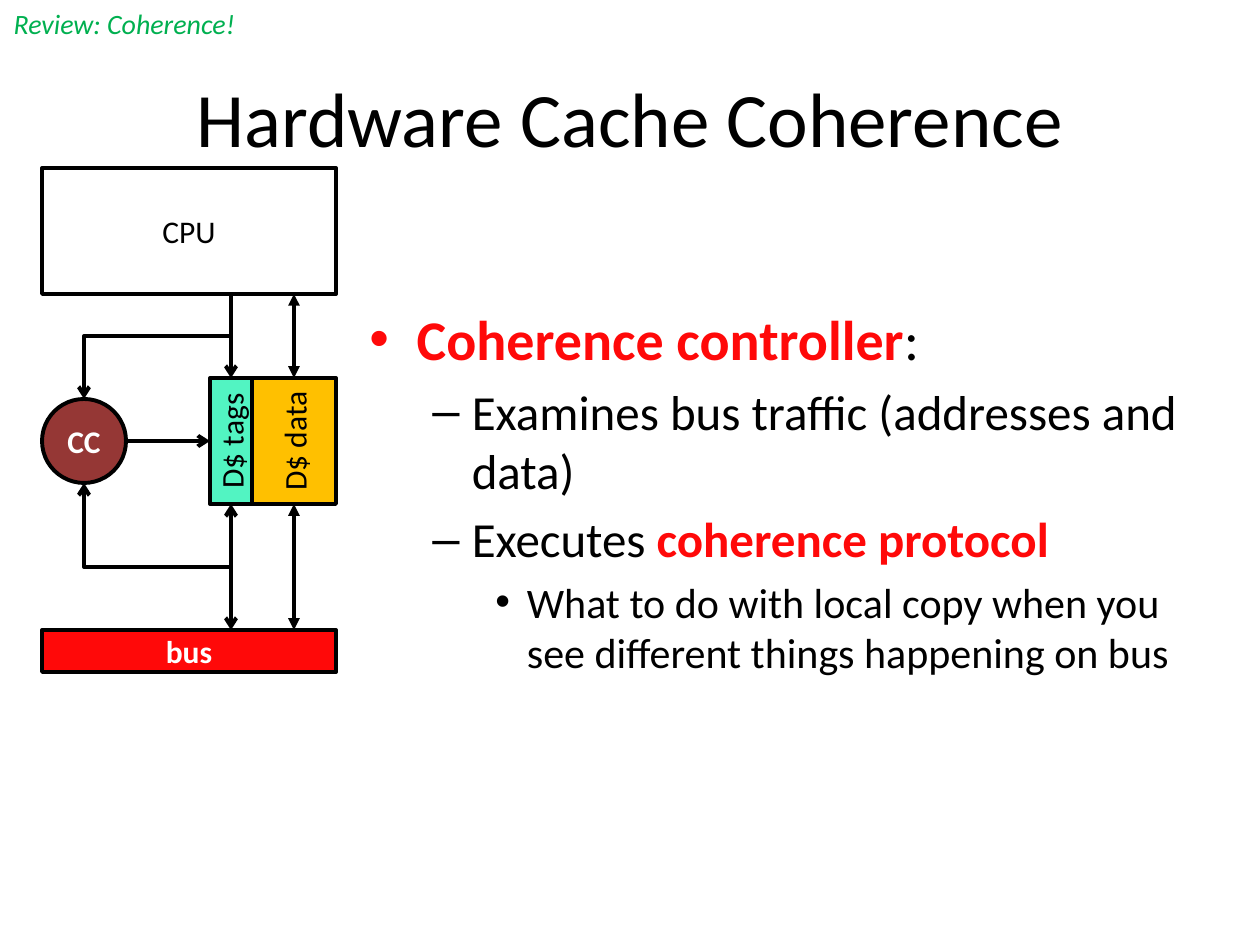
from lxml import etree
from pptx import Presentation
from pptx.dml.color import RGBColor
from pptx.enum.shapes import MSO_CONNECTOR, MSO_SHAPE
from pptx.enum.text import MSO_ANCHOR, MSO_AUTO_SIZE, PP_ALIGN
from pptx.oxml.ns import qn
from pptx.util import Pt

RECT, DISC = MSO_SHAPE.RECTANGLE, MSO_SHAPE.FLOWCHART_CONNECTOR
STRAIGHT = MSO_CONNECTOR.STRAIGHT
LEFT, MID = PP_ALIGN.LEFT, PP_ALIGN.CENTER
MIDDLE = MSO_ANCHOR.MIDDLE
FIT = MSO_AUTO_SIZE.SHAPE_TO_FIT_TEXT

BLACK = RGBColor(0, 0, 0)
WHITE = RGBColor(255, 255, 255)
RED = RGBColor(0xFF, 0x09, 0x09)
GREEN = RGBColor(0, 0xB0, 0x50)
MAROON = RGBColor(0x95, 0x37, 0x35)
GOLD = RGBColor(0xFF, 0xC0, 0)
MINT = RGBColor(0x52, 0xF4, 0xC2)

# Bullet levels: sign, left margin, hanging indent, text size
LEVELS = [("•", 27, 27, 32), ("–", 58.5, 22.5, 28), ("•", 90, 18, 24)]


def write(para, text, size=18, color=BLACK, bold=False, italic=False, align=None):
    """Add one formatted run to a paragraph."""
    run = para.add_run()
    run.text = text
    font = run.font
    font.name, font.size = "Calibri", Pt(size)
    font.bold, font.italic = bold, italic
    font.color.rgb = color
    if align is not None:
        para.alignment = align


def style(item, head=None, tail=None):
    """Give an outline its weight, colour and arrowheads, and no shadow."""
    item.line.width = Pt(2.25)
    item.line.color.rgb = BLACK
    line = item.element.spPr.find(qn("a:ln"))
    for tag, kind in (("a:headEnd", head), ("a:tailEnd", tail)):
        if kind:
            etree.SubElement(line, qn(tag), type=kind)


def block(slide, kind, place, text, fill=None, color=BLACK, bold=False, turn=0):
    shape = slide.shapes.add_shape(kind, *map(Pt, place))
    shape.rotation = turn
    shape.shadow.inherit = False
    if fill is None:
        shape.fill.background()
    else:
        shape.fill.solid()
        shape.fill.fore_color.rgb = fill
    style(shape)
    frame = shape.text_frame
    frame.word_wrap = False
    frame.vertical_anchor = MIDDLE
    write(frame.paragraphs[0], text, color=color, bold=bold, align=MID)
    return shape


def link(slide, start, end, head=None, tail=None, first=None, last=None):
    """Draw a straight line; first and last are (shape, side) joints."""
    ends = [*map(Pt, start), *map(Pt, end)]
    line = slide.shapes.add_connector(STRAIGHT, *ends)
    if first:
        line.begin_connect(*first)
    if last:
        line.end_connect(*last)
    # Joints ignore rotation, so set the ends again
    line.begin_x, line.begin_y, line.end_x, line.end_y = ends
    style(line, head, tail)
    etree.SubElement(line.element.spPr, qn("a:effectLst"))


def elbow(slide, *points):
    start, *rest = [tuple(map(Pt, point)) for point in points]
    pen = slide.shapes.build_freeform(*start)
    pen.add_line_segments(rest, close=False)
    shape = pen.convert_to_shape()
    shape.fill.background()
    shape.shadow.inherit = False
    style(shape, tail="arrow")


def bullet(para, level, color, *parts):
    sign, margin, hang, size = LEVELS[level]
    para.level = level
    props = para._p.get_or_add_pPr()
    props.set("marL", str(Pt(margin)))
    props.set("indent", str(-Pt(hang)))
    tint = etree.SubElement(etree.SubElement(props, qn("a:buClr")), qn("a:srgbClr"))
    tint.set("val", str(color))
    etree.SubElement(props, qn("a:buFont"), typeface="Arial")
    etree.SubElement(props, qn("a:buChar"), char=sign)
    para.space_before = Pt(size * 0.2)
    for text, strong in parts:
        write(para, text, size, RED if strong else BLACK, strong, align=LEFT)


def heading(slide):
    title = slide.shapes.title
    title.left, title.top, title.width, title.height = map(Pt, (36, 21.6, 648, 90))
    title.text_frame.vertical_anchor = MIDDLE
    write(title.text_frame.paragraphs[0], "Hardware Cache Coherence", 44, align=MID)


def points(slide):
    frame = slide.shapes.add_textbox(*map(Pt, (204, 170.4, 504, 321.6))).text_frame
    frame.word_wrap = True
    items = [
        (0, RED, ("Coherence controller", True), (":", False)),
        (1, BLACK, ("Examines bus traffic (addresses and data)", False)),
        (1, BLACK, ("Executes ", False), ("coherence protocol", True)),
        (2, BLACK, ("What to do with local copy when you see different "
                    "things happening on bus", False)),
    ]
    for i, item in enumerate(items):
        bullet(frame.add_paragraph() if i else frame.paragraphs[0], *item)
    frame.paragraphs[0].space_before = Pt(0)


def diagram(slide):
    # Blocks
    block(slide, RECT, (24, 96, 168, 72), "CPU")
    data = block(slide, RECT, (144, 216, 48, 72), "D$ data", GOLD)
    data.text_frame._txBody.bodyPr.set("vert", "vert270")
    tags = block(slide, RECT, (96, 240, 72, 24), "D$ tags", MINT, turn=270)
    block(slide, DISC, (24, 228, 48, 48), "CC", MAROON, WHITE, True)
    block(slide, RECT, (24, 360, 168, 24), "bus", RED, WHITE, True)

    # Straight links; the turned tags block has its right side on top
    both = {"head": "triangle", "tail": "triangle"}
    link(slide, (132, 168), (132, 216), tail="arrow", last=(tags, 3))
    link(slide, (168, 168), (168, 216), last=(data, 0), **both)
    link(slide, (168, 288), (168, 360), first=(data, 2), **both)
    link(slide, (132, 288), (132, 360), "arrow", "arrow", first=(tags, 1))
    link(slide, (120, 252), (72, 252), head="arrow", first=(tags, 0))

    # Bent links into the controller
    elbow(slide, (132, 324), (48, 324), (48, 276))
    elbow(slide, (132, 192), (48, 192), (48, 228))


def note(slide):
    frame = slide.shapes.add_textbox(*map(Pt, (0.7, 0, 142.6, 26.6))).text_frame
    frame.word_wrap = False
    frame.auto_size = FIT
    write(frame.paragraphs[0], "Review: Coherence!", 16, GREEN, italic=True)


def main():
    deck = Presentation()
    deck.slide_width, deck.slide_height = Pt(720), Pt(540)
    slide = deck.slides.add_slide(deck.slide_layouts[5])
    heading(slide)
    points(slide)
    diagram(slide)
    note(slide)
    deck.save("out.pptx")


if __name__ == "__main__":
    main()
